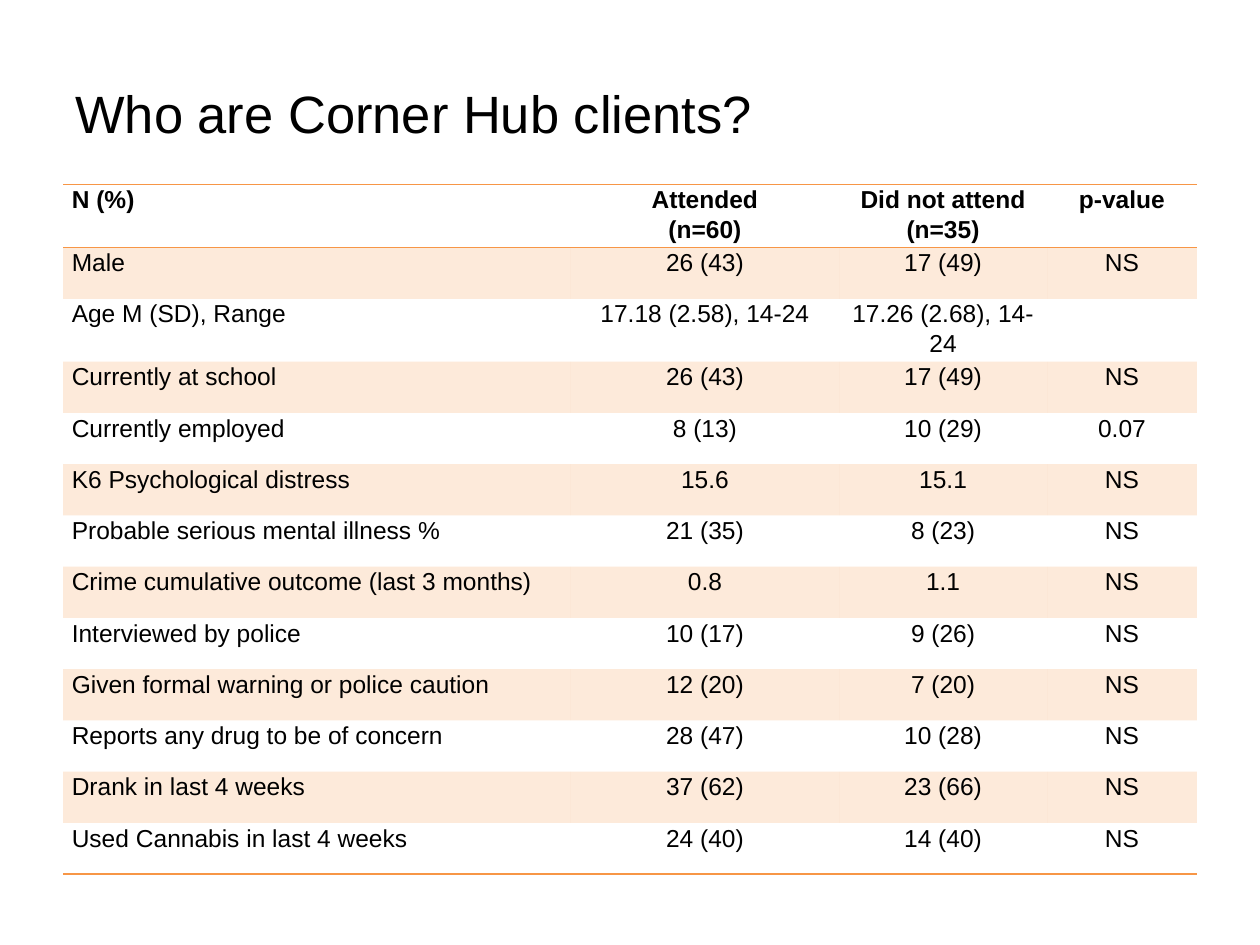
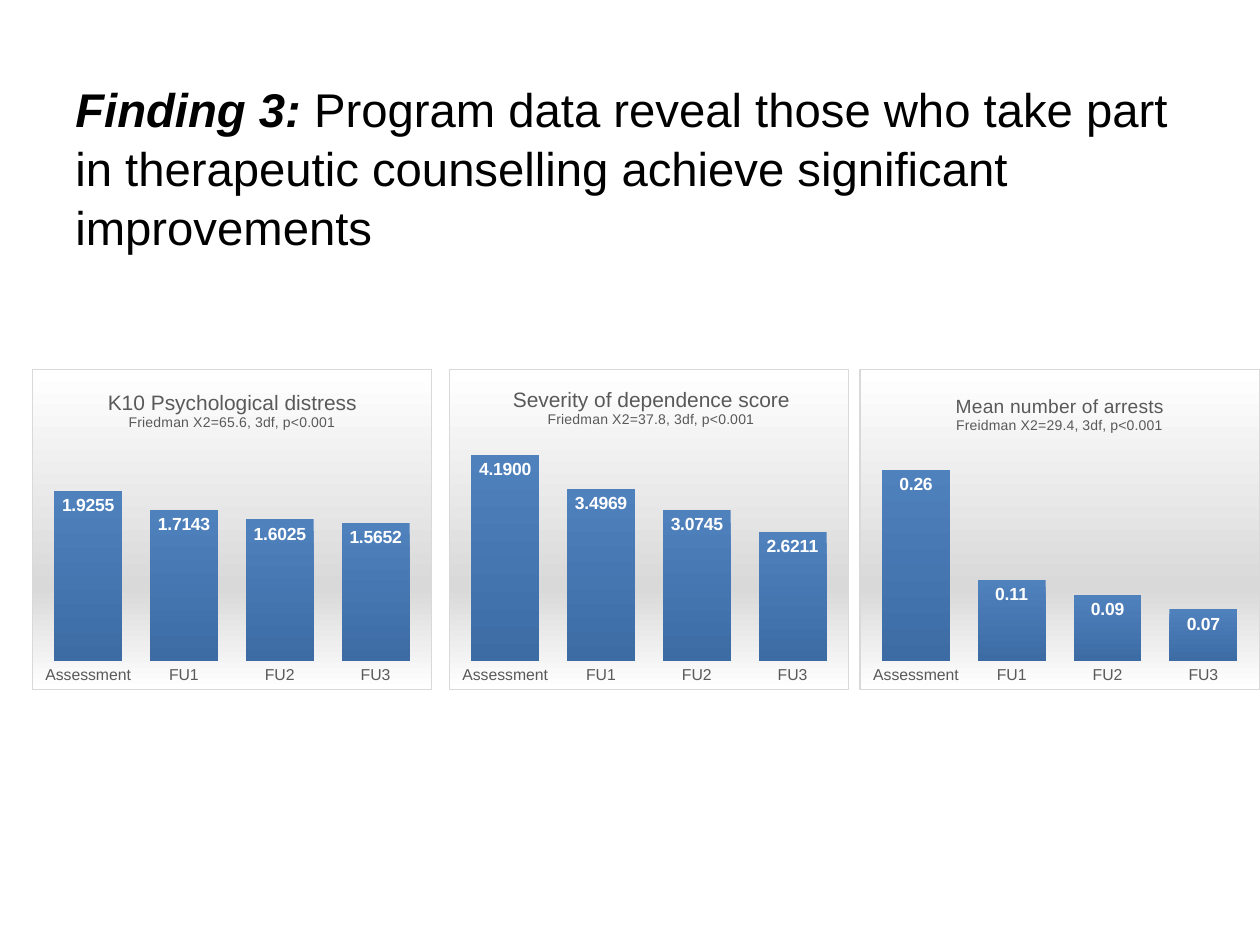
from dataclasses import dataclass

from lxml.etree import SubElement
from pptx import Presentation
from pptx.chart.data import CategoryChartData
from pptx.dml.color import RGBColor
from pptx.enum.chart import XL_CHART_TYPE, XL_LABEL_POSITION, XL_TICK_MARK
from pptx.enum.text import MSO_ANCHOR, PP_ALIGN
from pptx.oxml import parse_xml
from pptx.oxml.ns import nsdecls, qn
from pptx.util import Emu, Inches, Pt

FONT = "Arial"
COLORS = {
    "text": "000000",
    "accent": "F79646",
    "muted": "595959",
    "light": "FFFFFF",
    "grey": "D9D9D9",
    "bar_top": "4F81BD",
    "bar_foot": "3D6CA4",
}
NO_TABLE_STYLE = "{2D5ABB26-0587-4C30-8999-92F81FD0307C}"


@dataclass(frozen=True)
class Run:
    text: str
    size: float
    color: str = "text"
    bold: bool = False
    italic: bool = False


@dataclass(frozen=True)
class Outcome:
    column: float
    heading: Run
    test: str
    values: tuple[float, ...]
    axis_max: float
    number_format: str
    title_x: float
    title_y: float


def grid(units: float) -> Emu:
    """The slide is a grid of 100 columns by 75 rows."""
    return Inches(units / 10)


def rgb(name: str) -> RGBColor:
    return RGBColor.from_string(COLORS[name])


def style_font(font, size: float, color: str, bold=False, italic=False) -> None:
    font.name, font.size = FONT, Pt(size)
    font.bold, font.italic = bold, italic
    font.color.rgb = rgb(color)


def add_run(paragraph, part: Run) -> None:
    run = paragraph.add_run()
    run.text = part.text
    style_font(run.font, part.size, part.color, part.bold, part.italic)


def add_title(slide, *parts: Run) -> None:
    box = slide.shapes.add_textbox(grid(5), grid(5.2), grid(90), grid(8.7))
    frame = box.text_frame
    frame.word_wrap = True
    frame.vertical_anchor = MSO_ANCHOR.TOP
    frame.margin_top = grid(1)
    heading = frame.paragraphs[0]
    heading.line_spacing = 1.04
    for part in parts:
        add_run(heading, part)


# Client table
HEADER = ("N (%)", "Attended\n(n=60)", "Did not attend (n=35)", "p-value")
CLIENTS = (
    ("Male", "26 (43)", "17 (49)", "NS"),
    ("Age M (SD), Range", "17.18 (2.58), 14-24", "17.26 (2.68), 14-24", ""),
    ("Currently at school", "26 (43)", "17 (49)", "NS"),
    ("Currently employed", "8 (13)", "10 (29)", "0.07"),
    ("K6 Psychological distress", "15.6", "15.1", "NS"),
    ("Probable serious mental illness %", "21 (35)", "8 (23)", "NS"),
    ("Crime cumulative outcome (last 3 months)", "0.8", "1.1", "NS"),
    ("Interviewed by police", "10 (17)", "9 (26)", "NS"),
    ("Given formal warning or police caution", "12 (20)", "7 (20)", "NS"),
    ("Reports any drug to be of concern", "28 (47)", "10 (28)", "NS"),
    ("Drank in last 4 weeks", "37 (62)", "23 (66)", "NS"),
    ("Used Cannabis in last 4 weeks", "24 (40)", "14 (40)", "NS"),
)
CLIENT_COLUMNS = (40.3, 21.3, 16.5, 11.9)
ROW_HEIGHT = 4.07


def add_rule(cell, side: str) -> None:
    line = SubElement(cell._tc.get_or_add_tcPr(), qn(f"a:ln{side}"), w=str(Pt(1)))
    fill = SubElement(line, qn("a:solidFill"))
    SubElement(fill, qn("a:srgbClr"), val=COLORS["accent"])


def fill_cell(cell, banded: bool) -> None:
    if not banded:
        cell.fill.background()
        return
    cell.fill.solid()
    cell.fill.fore_color.rgb = rgb("accent")
    tint = cell._tc.tcPr.find(".//" + qn("a:srgbClr"))
    SubElement(tint, qn("a:alpha"), val="20000")


def write_cell(cell, text: str, centred: bool, bold: bool) -> None:
    cell.margin_left = cell.margin_right = grid(0.7)
    cell.margin_top = cell.margin_bottom = 0
    frame = cell.text_frame
    for index, line in enumerate(text.split("\n")):
        paragraph = frame.add_paragraph() if index else frame.paragraphs[0]
        paragraph.alignment = PP_ALIGN.CENTER if centred else PP_ALIGN.LEFT
        paragraph.line_spacing = 1.07
        if line:
            add_run(paragraph, Run(line, 14, bold=bold))


def add_client_table(slide) -> None:
    rows = (HEADER, *CLIENTS)
    last = len(rows) - 1
    table = slide.shapes.add_table(
        len(rows), len(HEADER), grid(5), grid(14.65),
        grid(sum(CLIENT_COLUMNS)), grid(ROW_HEIGHT * len(rows)),
    ).table
    table.first_row = table.horz_banding = False
    table._tbl.tblPr.find(qn("a:tableStyleId")).text = NO_TABLE_STYLE
    for column, width in zip(table.columns, CLIENT_COLUMNS):
        column.width = grid(width)
    for r, texts in enumerate(rows):
        table.rows[r].height = grid(ROW_HEIGHT)
        for c, text in enumerate(texts):
            cell = table.cell(r, c)
            write_cell(cell, text, centred=c > 0, bold=r == 0)
            if r == 0:
                add_rule(cell, "T")
            if r in (0, last):
                add_rule(cell, "B")
            fill_cell(cell, banded=r % 2 == 1)


# Outcome charts
STAGES = ("Assessment", "FU1", "FU2", "FU3")
OUTCOMES = (
    Outcome(2.5, Run("K10 Psychological distress", 12, "muted"),
            "Friedman X2=65.6, 3df, p<0.001",
            (1.9255, 1.7143, 1.6025, 1.5652), 2.5, "###0.0000", 0.18, 0.05),
    Outcome(35.6, Run("Severity of dependence score", 12, "muted"),
            "Friedman X2=37.8, 3df, p<0.001",
            (4.19, 3.4969, 3.0745, 2.6211), 4.5, "###0.0000", 0.15, 0.04),
    Outcome(68.2, Run("Mean number of arrests", 11, "muted"),
            "Freidman X2=29.4, 3df, p<0.001",
            (0.26, 0.11, 0.09, 0.07), 0.3, "###0.00", 0.23, 0.06),
)


def manual_layout(inner: bool = False, **shares: float):
    target = '<c:layoutTarget val="inner"/>' if inner else ""
    modes = "".join(f'<c:{key}Mode val="edge"/>' for key in ("x", "y"))
    sizes = "".join(f'<c:{key} val="{share}"/>' for key, share in shares.items())
    return parse_xml(
        f'<c:layout {nsdecls("c")}><c:manualLayout>'
        f"{target}{modes}{sizes}</c:manualLayout></c:layout>"
    )


def replace_layout(parent, layout, after: str | None = None) -> None:
    for old in parent.findall(qn("c:layout")):
        parent.remove(old)
    if after:
        parent.find(qn(after)).addnext(layout)
    else:
        parent.insert(0, layout)


def fill_chart_area(chart) -> None:
    stops = "".join(
        f'<a:gs pos="{share * 1000}"><a:srgbClr val="{COLORS[name]}"/></a:gs>'
        for share, name in ((0, "light"), (68, "grey"), (100, "light"))
    )
    area = parse_xml(
        f'<c:spPr {nsdecls("c", "a")}><a:gradFill><a:gsLst>{stops}</a:gsLst>'
        f'<a:lin ang="5400000" scaled="0"/></a:gradFill><a:ln w="{Pt(0.75)}">'
        f'<a:solidFill><a:srgbClr val="{COLORS["grey"]}"/></a:solidFill>'
        "</a:ln></c:spPr>"
    )
    chart._chartSpace.find(qn("c:chart")).addnext(area)


def title_chart(chart, outcome: Outcome) -> None:
    frame = chart.chart_title.text_frame
    add_run(frame.paragraphs[0], outcome.heading)
    add_run(frame.add_paragraph(), Run(outcome.test, 8, "muted"))
    replace_layout(
        chart.chart_title._element,
        manual_layout(x=outcome.title_x, y=outcome.title_y), after="c:tx",
    )


def style_axes(chart, outcome: Outcome) -> None:
    stages, scores = chart.category_axis, chart.value_axis
    stages.major_tick_mark = stages.minor_tick_mark = XL_TICK_MARK.NONE
    stages.format.line.fill.background()
    style_font(stages.tick_labels.font, 9, "muted")
    scores.visible = scores.has_major_gridlines = False
    scores.minimum_scale, scores.maximum_scale = 0, outcome.axis_max


def style_bars(plot, number_format: str) -> None:
    plot.gap_width = 41
    plot.vary_by_categories = False
    bars = plot.series[0]
    fill = bars.format.fill
    fill.gradient()
    fill.gradient_angle = 270
    for stop, name in zip(fill.gradient_stops, ("bar_top", "bar_foot")):
        stop.color.rgb = rgb(name)
    labels = bars.data_labels
    labels.show_value = True
    labels.position = XL_LABEL_POSITION.INSIDE_END
    labels.number_format = number_format
    labels.number_format_is_linked = False
    style_font(labels.font, 10, "light", bold=True)


def add_outcome_chart(slide, outcome: Outcome) -> None:
    scores = CategoryChartData(number_format=outcome.number_format)
    scores.categories = STAGES
    scores.add_series("Series 1", outcome.values)
    chart = slide.shapes.add_chart(
        XL_CHART_TYPE.COLUMN_CLUSTERED, grid(outcome.column), grid(29.3),
        grid(31.8), grid(25.5), scores,
    ).chart
    style_font(chart.font, 10, "text")
    chart.has_legend = False
    title_chart(chart, outcome)
    style_axes(chart, outcome)
    style_bars(chart.plots[0], outcome.number_format)
    fill_chart_area(chart)
    plot_area = chart._chartSpace.find(".//" + qn("c:plotArea"))
    replace_layout(plot_area, manual_layout(True, x=0.02, y=0.22, w=0.96, h=0.69))


def main() -> None:
    deck = Presentation()
    deck.slide_width, deck.slide_height = grid(100), grid(75)
    blank = deck.slide_layouts[6]

    clients = deck.slides.add_slide(blank)
    add_title(clients, Run("Who are Corner Hub clients?", 30))
    add_client_table(clients)

    finding = deck.slides.add_slide(blank)
    add_title(
        finding,
        Run("Finding 3: ", 27, bold=True, italic=True),
        Run("Program data reveal those who take part in therapeutic "
            "counselling achieve significant improvements", 27),
    )
    for outcome in OUTCOMES:
        add_outcome_chart(finding, outcome)

    deck.save("out.pptx")


if __name__ == "__main__":
    main()
